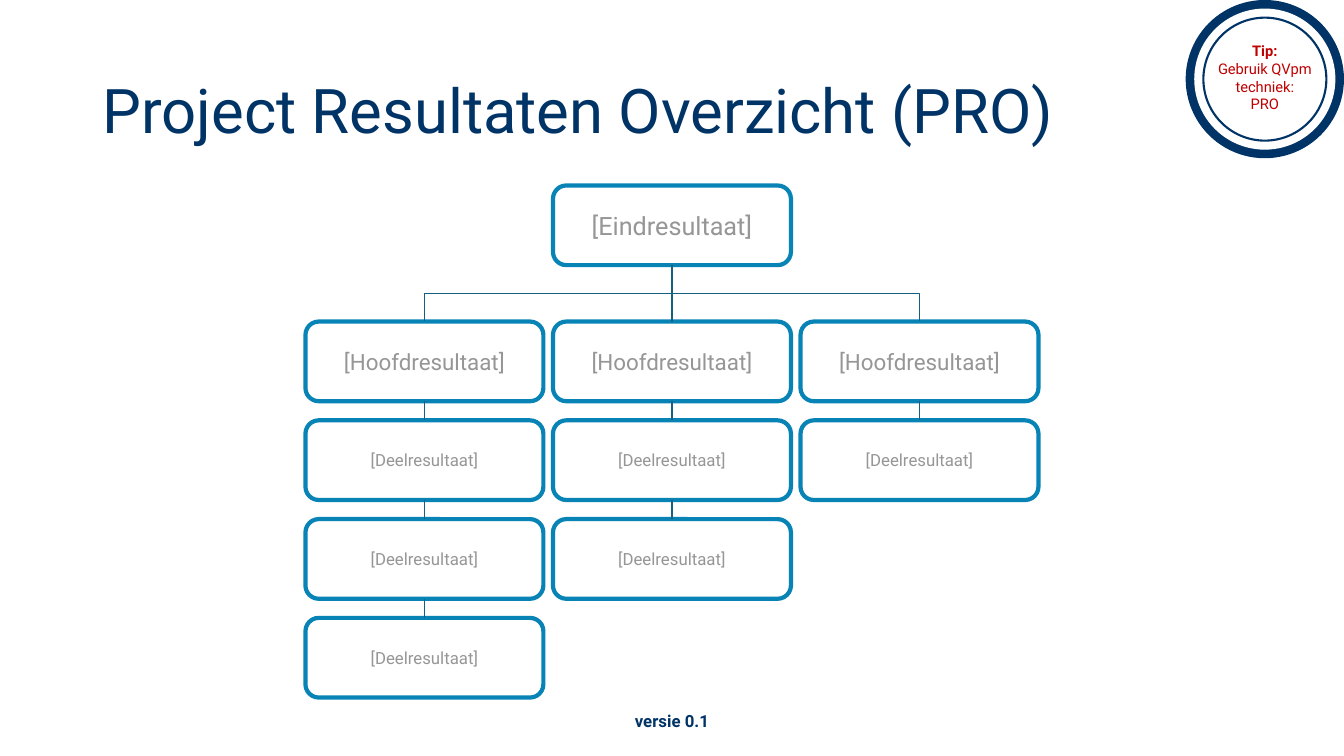
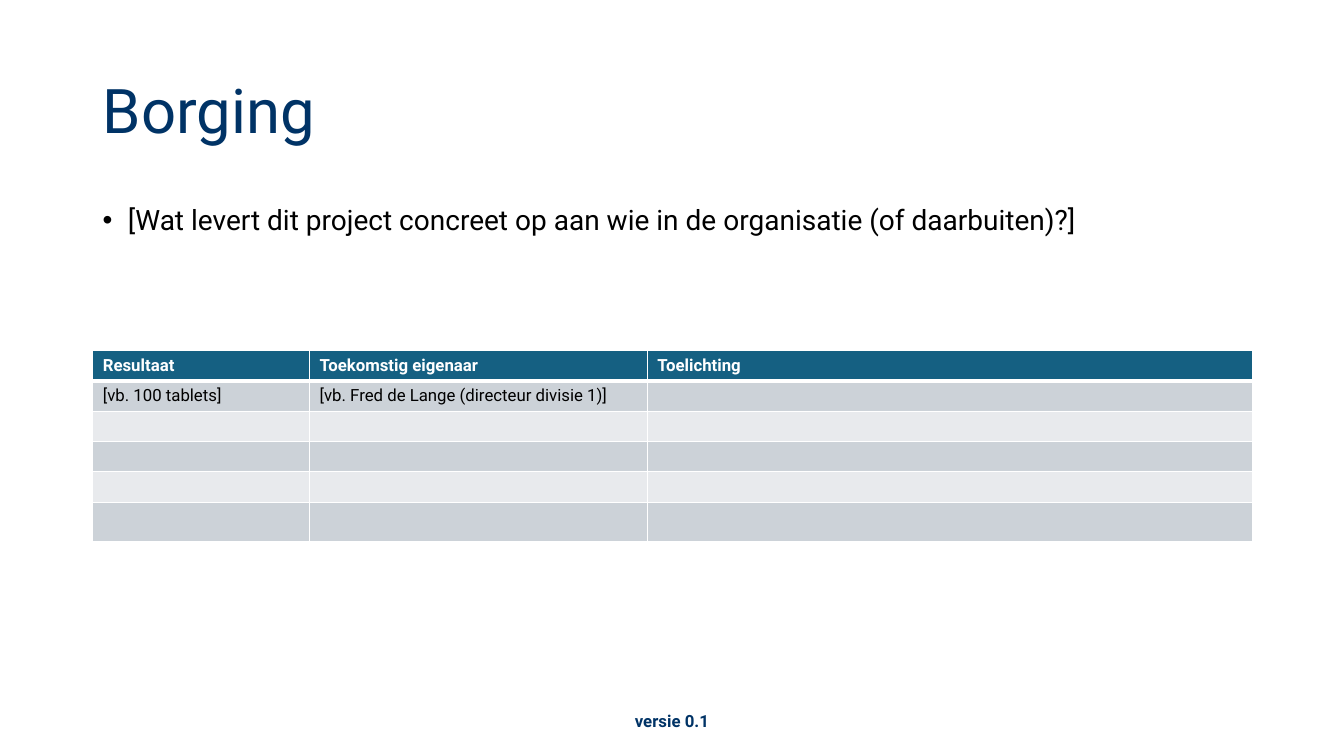
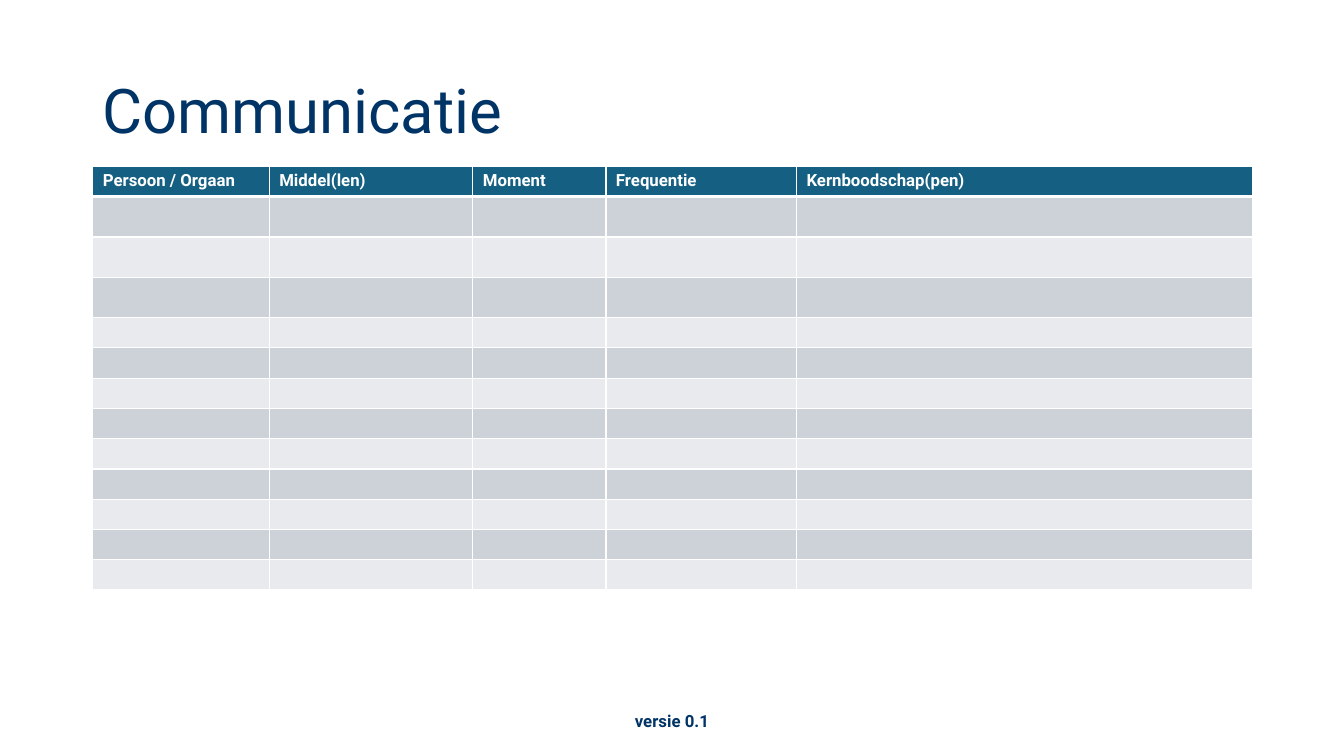
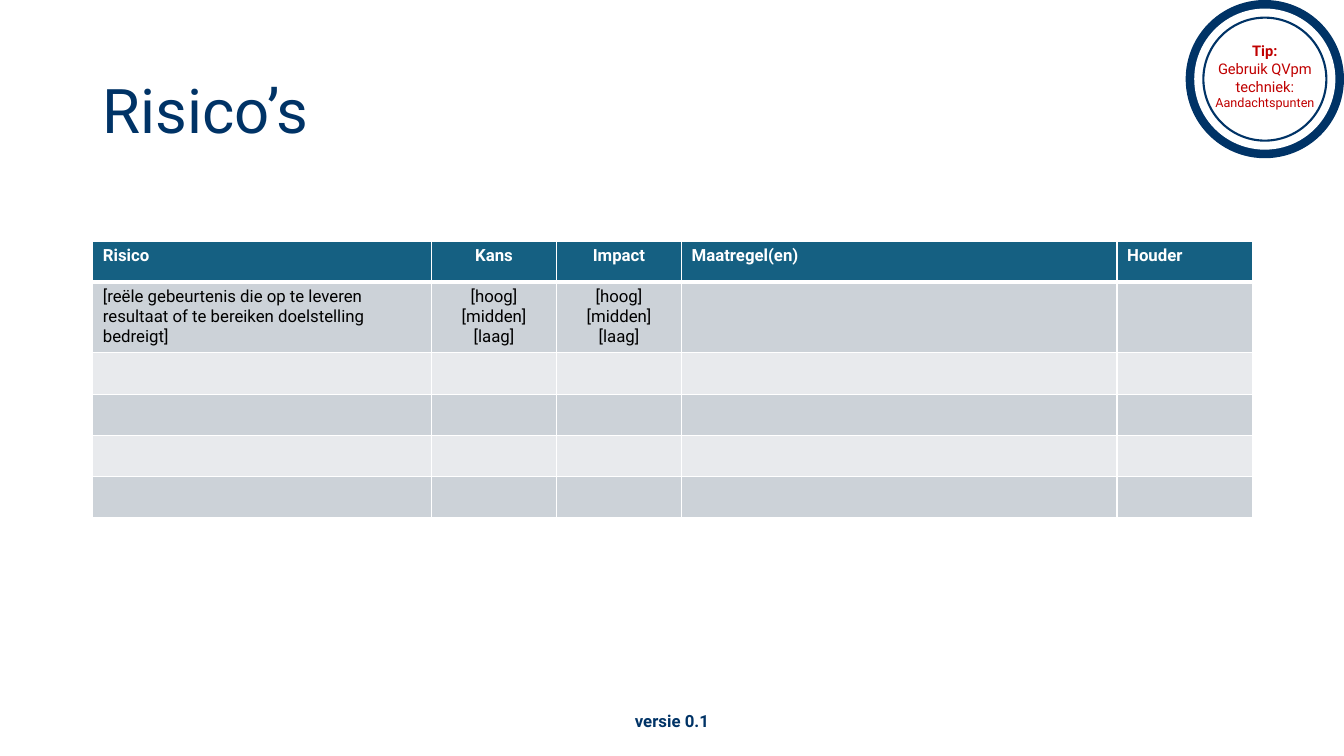
import pptx
import pptx.util
import pptx.dml.color
import pptx.enum.shapes
import pptx.enum.text
import pptx.oxml.ns
import lxml.etree

WIDTH, HEIGHT = 13.33, 7.5
MARGIN, CONTENT_WIDTH = 0.92, 11.5
FONT = "Roboto"
NAVY, TEAL, BLUE = "003366", "156082", "0783B6"
GREY, RED, BLACK, WHITE = "969696", "C00000", "000000", "FFFFFF"
BANDS = ("CCD2D8", "E8EAED")
VERSION = "versie 0.1"

ROOT = "[Eindresultaat]"
BRANCHES = [("[Hoofdresultaat]", ["[Deelresultaat]"] * count) for count in (3, 2, 1)]

TIP_HEAD = [("Tip:", {"bold": True})]
TIP_TEXT = "Gebruik QVpm techniek: "
TIP_RESULTS = [TIP_HEAD, TIP_TEXT.strip(), "PRO"]
TIP_RISKS = [TIP_HEAD, [(TIP_TEXT, {}), ("Aandachtspunten", {"size": 9})]]

LEVELS = ["[hoog]", "[midden]", "[laag]"]
SLIDES = [
    {"title": "Project Resultaten Overzicht (PRO)", "tree": True, "tip": TIP_RESULTS},
    {
        "title": "Borging",
        "bullet": "[Wat levert dit project concreet op aan wie in de organisatie (of daarbuiten)?]",
        "table": {
            "top": 3.48,
            "columns": [2.15, 3.35, 6],
            "rows": [0.29] * 5 + [0.39],
            "cells": [
                ["Resultaat", "Toekomstig eigenaar", "Toelichting"],
                ["[vb. 100 tablets]", "[vb. Fred de Lange (directeur divisie 1)]"],
            ],
        },
    },
    {
        "title": "Communicatie",
        "table": {
            "top": 1.65,
            "columns": [1.75, 2.02, 1.32, 1.89, 4.52],
            "rows": [0.29] + [0.4] * 3 + [0.29] * 9,
            "cells": [
                ["Persoon / Orgaan", "Middel(len)", "Moment", "Frequentie", "Kernboodschap(pen)"],
            ],
        },
    },
    {
        "title": "Risico’s",
        "tip": TIP_RISKS,
        "table": {
            "top": 2.39,
            "columns": [3.36, 1.24, 1.24, 4.32, 1.34],
            "rows": [0.41, 0.7] + [0.41] * 4,
            "centred": (1, 2),
            "cells": [
                ["Risico", "Kans", "Impact", "Maatregel(en)", "Houder"],
                [
                    "[reële gebeurtenis die op te leveren resultaat of te bereiken doelstelling bedreigt]",
                    LEVELS,
                    LEVELS,
                ],
            ],
        },
    },
]

inch = pptx.util.Inches
qn = pptx.oxml.ns.qn
SHAPE = pptx.enum.shapes.MSO_SHAPE
LINK = pptx.enum.shapes.MSO_CONNECTOR
ALIGN = pptx.enum.text.PP_ALIGN
ANCHOR = pptx.enum.text.MSO_ANCHOR


def paint(color_format, value):
    color_format.rgb = pptx.dml.color.RGBColor.from_string(value)


def fill_solid(fill, value):
    fill.solid()
    paint(fill.fore_color, value)


def write(frame, lines, size=12, color=BLACK, bold=False, align=ALIGN.LEFT,
          anchor=ANCHOR.TOP, spacing=None, before=None, bullet=None):
    frame.word_wrap = True
    frame.vertical_anchor = anchor
    for index, line in enumerate(lines):
        para = frame.paragraphs[0] if index == 0 else frame.add_paragraph()
        para.alignment = align
        if spacing:
            para.line_spacing = spacing
        if before:
            para.space_before = pptx.util.Pt(before)
        if bullet:
            properties = para._p.get_or_add_pPr()
            properties.set("marL", str(inch(0.25)))
            properties.set("indent", str(-inch(0.25)))
            lxml.etree.SubElement(properties, qn("a:buFont")).set("typeface", "Arial")
            lxml.etree.SubElement(properties, qn("a:buChar")).set("char", bullet)
        for text, changes in [(line, {})] if isinstance(line, str) else line:
            span = para.add_run()
            span.text = text
            span.font.name = FONT
            span.font.size = pptx.util.Pt(changes.get("size", size))
            span.font.bold = changes.get("bold", bold)
            paint(span.font.color, color)


def add_text(page, left, top, width, height, lines, **style):
    box = page.shapes.add_textbox(inch(left), inch(top), inch(width), inch(height))
    write(box.text_frame, lines, **style)


def add_shape(page, kind, left, top, width, height, fill=None, line=None, weight=1):
    shape = page.shapes.add_shape(kind, inch(left), inch(top), inch(width), inch(height))
    shape.shadow.inherit = False
    if fill:
        fill_solid(shape.fill, fill)
    else:
        shape.fill.background()
    if line:
        paint(shape.line.color, line)
        shape.line.width = pptx.util.Pt(weight)
    else:
        shape.line.fill.background()
    return shape


def link_down(page, upper, lower):
    start_x, start_y = upper.left + upper.width // 2, upper.top + upper.height
    end_x, end_y = lower.left + lower.width // 2, lower.top
    across, down = end_x - start_x, end_y - start_y
    bent = abs(across) > inch(0.1)
    kind = LINK.ELBOW if bent else LINK.STRAIGHT
    line = page.shapes.add_connector(kind, start_x, start_y, end_x, end_y)
    line.begin_connect(upper, 2)
    line.end_connect(lower, 0)
    paint(line.line.color, TEAL)
    line.line.width = pptx.util.Pt(1)
    properties = line._element.spPr
    lxml.etree.SubElement(properties, qn("a:effectLst"))
    if bent:
        line.left = (start_x + end_x - down) // 2
        line.top = (start_y + end_y - abs(across)) // 2
        line.width, line.height = down, abs(across)
        turn = properties.find(qn("a:xfrm"))
        turn.set("rot", str((90 if across < 0 else 270) * 60000))
        turn.set("flipH", "0" if across < 0 else "1")


def add_tree(page):
    width, height, column_step, row_step = 2.36, 0.79, 2.455, 0.98
    left, root_top, branch_top = 3.03, 1.84, 3.19

    def add_box(text, column, top, size):
        box = add_shape(page, SHAPE.ROUNDED_RECTANGLE, left + column * column_step, top,
                        width, height, line=BLUE, weight=3)
        write(box.text_frame, [text], size=size, color=GREY,
              align=ALIGN.CENTER, anchor=ANCHOR.MIDDLE)
        return box

    root = add_box(ROOT, 1, root_top, 18)
    links = []
    for column, (branch, parts) in enumerate(BRANCHES):
        upper = add_box(branch, column, branch_top, 16)
        links.append((root, upper))
        for row, part in enumerate(parts, 1):
            lower = add_box(part, column, branch_top + row * row_step, 12)
            links.append((upper, lower))
            upper = lower
    for upper, lower in links:
        link_down(page, upper, lower)


def add_tip(page, lines):
    badge = 1.57
    center_x, center_y = WIDTH - badge / 2, badge / 2

    def add_circle(size, **style):
        add_shape(page, SHAPE.OVAL, center_x - size / 2, center_y - size / 2, size, size, **style)

    add_circle(badge, fill=NAVY)
    add_circle(1.4, fill=WHITE)
    add_text(page, center_x - 0.59, 0.37, 1.18, 0.81, lines,
             size=10.5, color=RED, align=ALIGN.CENTER)
    add_circle(1.22, line=NAVY, weight=1.5)


def set_borders(cell, **weights):
    properties = cell._tc.get_or_add_tcPr()
    for side in "LRTB":
        border = lxml.etree.SubElement(properties, qn("a:ln" + side))
        border.set("w", str(pptx.util.Pt(weights.get(side, 1))))
        fill = lxml.etree.SubElement(border, qn("a:solidFill"))
        lxml.etree.SubElement(fill, qn("a:srgbClr")).set("val", WHITE)


def add_table(page, top, columns, rows, cells, centred=()):
    table = page.shapes.add_table(len(rows), len(columns), inch(MARGIN), inch(top),
                                  inch(CONTENT_WIDTH), inch(sum(rows))).table
    for column, width in zip(table.columns, columns):
        column.width = inch(width)
    for row_index, height in enumerate(rows):
        table.rows[row_index].height = inch(height)
        header = row_index == 0
        texts = cells[row_index] if row_index < len(cells) else []
        for column_index in range(len(columns)):
            cell = table.cell(row_index, column_index)
            set_borders(cell, B=3 if header else 1, T=3 if row_index == 1 else 1)
            fill_solid(cell.fill, TEAL if header else BANDS[(row_index - 1) % 2])
            if column_index < len(texts):
                text = texts[column_index]
                write(cell.text_frame, [text] if isinstance(text, str) else text,
                      color=WHITE if header else BLACK, bold=header,
                      align=ALIGN.CENTER if column_index in centred else ALIGN.LEFT)
            else:
                para = cell.text_frame.paragraphs[0]
                ending = lxml.etree.SubElement(para._p, qn("a:endParaRPr"))
                ending.set("sz", "1200")
                lxml.etree.SubElement(ending, qn("a:latin")).set("typeface", FONT)


def add_page(deck, content):
    page = deck.slides.add_slide(deck.slide_layouts[6])
    add_text(page, MARGIN, 0.4, CONTENT_WIDTH, 1.45, [content["title"]],
             size=44, color=NAVY, anchor=ANCHOR.MIDDLE, spacing=0.9)
    if "bullet" in content:
        add_text(page, MARGIN, 2, CONTENT_WIDTH, 1.4, [content["bullet"]],
                 size=20, spacing=0.9, before=10, bullet="•")
    add_text(page, (WIDTH - 4.5) / 2, 6.95, 4.5, 0.4, [VERSION], color=NAVY, bold=True,
             align=ALIGN.CENTER, anchor=ANCHOR.MIDDLE)
    if "tree" in content:
        add_tree(page)
    if "tip" in content:
        add_tip(page, content["tip"])
    if "table" in content:
        add_table(page, **content["table"])


def main():
    deck = pptx.Presentation()
    deck.slide_width, deck.slide_height = inch(WIDTH), inch(HEIGHT)
    for content in SLIDES:
        add_page(deck, content)
    deck.save("out.pptx")


if __name__ == "__main__":
    main()
